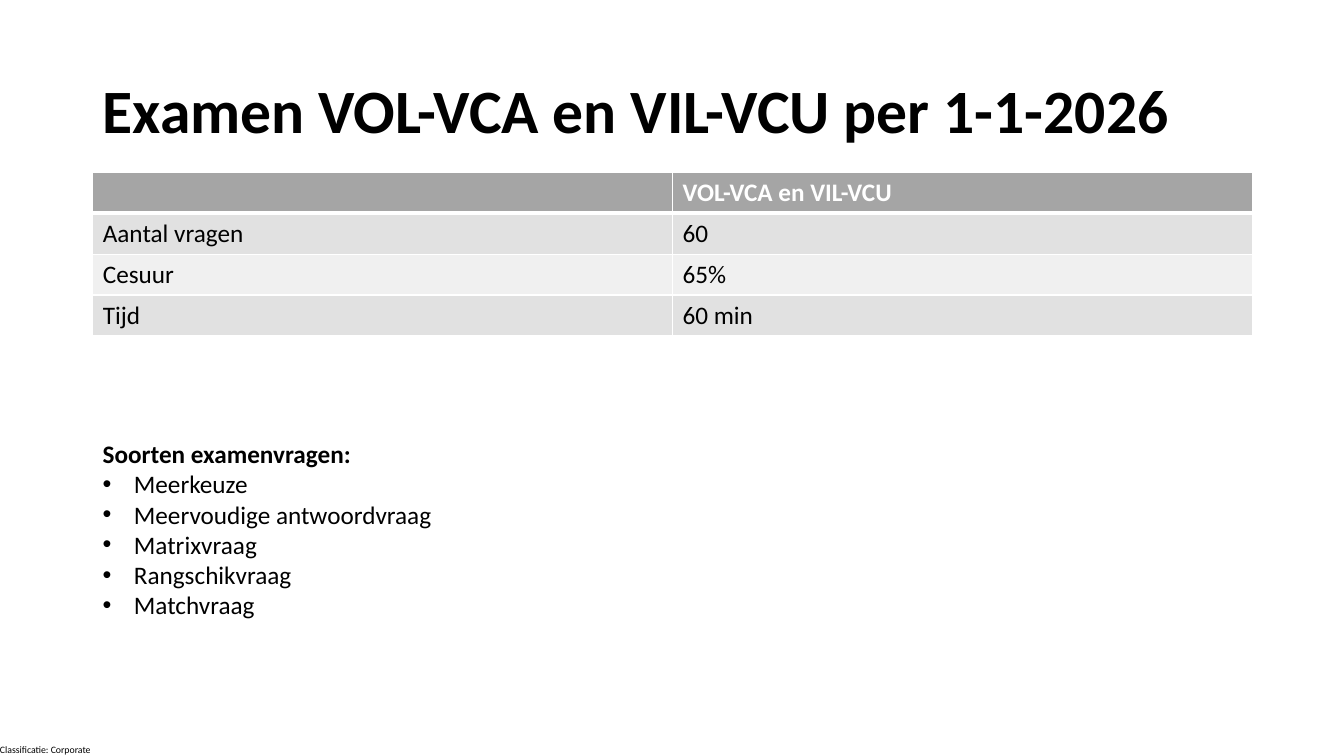
from dataclasses import dataclass

from lxml.etree import SubElement
from pptx import Presentation
from pptx.dml.color import RGBColor
from pptx.enum.text import MSO_ANCHOR, PP_ALIGN
from pptx.oxml.ns import qn
from pptx.slide import Slide
from pptx.table import _Cell
from pptx.text.text import TextFrame, _Paragraph
from pptx.util import Inches, Pt

HUES = {"ink": "000000", "paper": "FFFFFF", "head": "A5A5A5",
        "odd": "E1E1E1", "even": "F0F0F0"}


@dataclass(frozen=True)
class Line:
    text: str
    size: float = 18
    bold: bool = False
    hue: str = "ink"
    dot: bool = False


@dataclass(frozen=True)
class Row:
    label: str
    value: str
    fill: str
    hue: str = "ink"
    bold: bool = False
    rule: float = 1


@dataclass(frozen=True)
class Box:
    left: float
    top: float
    width: float
    height: float
    inset: bool
    lines: tuple[Line, ...]


ROWS = (
    Row("", "VOL-VCA en VIL-VCU", "head", "paper", True, 3),
    Row("Aantal vragen", "60", "odd"),
    Row("Cesuur", "65%", "even"),
    Row("Tijd", "60 min", "odd"),
)
KINDS = ("Meerkeuze", "Meervoudige antwoordvraag", "Matrixvraag",
         "Rangschikvraag", "Matchvraag")
BOXES = (
    Box(0, 7.38, 0.94, 0.12, False, (Line("Classificatie: Corporate", 7),)),
    Box(0.92, 4.3, 10.72, 1.92, True,
        (Line("Soorten examenvragen:", bold=True),
         *(Line(kind, dot=True) for kind in KINDS))),
)


def color(name: str) -> RGBColor:
    """Look up a named colour."""
    return RGBColor.from_string(HUES[name])


def write(para: _Paragraph, line: Line) -> None:
    """Add one line of text to a paragraph, with a bullet if wanted."""
    if line.dot:
        props = para._p.get_or_add_pPr()
        props.set("marL", str(Inches(0.31)))
        props.set("indent", str(Inches(-0.31)))
        SubElement(props, qn("a:buFont")).set("typeface", "Arial")
        SubElement(props, qn("a:buChar")).set("char", "•")
    run = para.add_run()
    run.text = line.text
    font = run.font
    font.name = "Calibri"
    font.size = Pt(line.size)
    font.bold = line.bold
    font.color.rgb = color(line.hue)


def fill(frame: TextFrame, lines: tuple[Line, ...]) -> None:
    """Write lines into a frame, one to a paragraph."""
    for i, line in enumerate(lines):
        write(frame.add_paragraph() if i else frame.paragraphs[0], line)


def edge(cell: _Cell, top: float, base: float) -> None:
    """Draw white borders round a cell."""
    props = cell._tc.get_or_add_tcPr()
    sides = (("L", 1), ("R", 1), ("T", top), ("B", base))
    for i, (side, width) in enumerate(sides):
        rule = SubElement(props, qn(f"a:ln{side}"), w=str(Pt(width)))
        solid = SubElement(rule, qn("a:solidFill"))
        SubElement(solid, qn("a:srgbClr"), val=HUES["paper"])
        props.insert(i, rule)


def grid(slide: Slide) -> None:
    """Draw the exam table."""
    table = slide.shapes.add_table(
        len(ROWS), 2, Inches(0.92), Inches(1.71), Inches(11.5),
        Inches(1.62)).table
    above = 1
    for i, row in enumerate(ROWS):
        for j, text in enumerate((row.label, row.value)):
            cell = table.cell(i, j)
            cell.fill.solid()
            cell.fill.fore_color.rgb = color(row.fill)
            edge(cell, above, row.rule)
            if text:
                line = Line(text, bold=row.bold, hue=row.hue)
                fill(cell.text_frame, (line,))
        above = row.rule


def head(slide: Slide) -> None:
    """Place and format the title."""
    title = slide.shapes.title
    title.left, title.top = Inches(0.92), Inches(0.4)
    title.width, title.height = Inches(11.5), Inches(1.45)
    frame = title.text_frame
    frame.vertical_anchor = MSO_ANCHOR.MIDDLE
    para = frame.paragraphs[0]
    para.alignment = PP_ALIGN.LEFT
    para.line_spacing = 0.9
    write(para, Line("Examen VOL-VCA en VIL-VCU per 1-1-2026", 44, True))


def label(slide: Slide, box: Box) -> None:
    """Draw a text box."""
    shape = slide.shapes.add_textbox(
        Inches(box.left), Inches(box.top),
        Inches(box.width), Inches(box.height))
    frame = shape.text_frame
    frame.word_wrap = box.inset
    if not box.inset:
        frame.margin_left = frame.margin_right = Inches(0)
        frame.margin_top = frame.margin_bottom = Inches(0)
    fill(frame, box.lines)


def main() -> None:
    """Build and save the slide."""
    deck = Presentation()
    deck.slide_width, deck.slide_height = Inches(13.33), Inches(7.5)
    slide = deck.slides.add_slide(deck.slide_layouts[5])
    grid(slide)
    head(slide)
    for box in BOXES:
        label(slide, box)
    deck.save("out.pptx")


if __name__ == "__main__":
    main()
